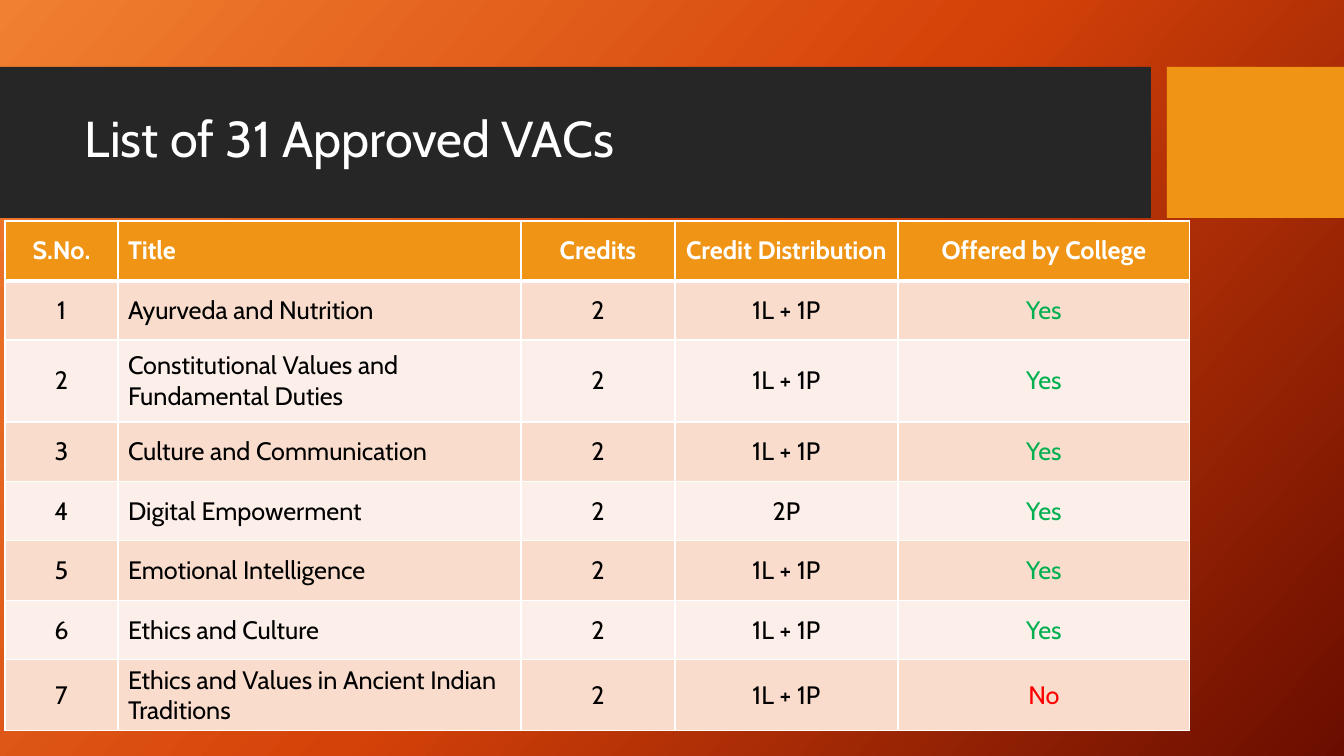
"""Builds the slide listing the approved value added courses."""
import copy
import pptx
import pptx.util
import pptx.dml.color
import pptx.enum.shapes
import pptx.enum.text
import pptx.oxml
import pptx.oxml.ns

RGB = pptx.dml.color.RGBColor
WHITE = RGB(0xFF, 0xFF, 0xFF)
BLACK = RGB(0, 0, 0)
DARK = RGB(0x26, 0x26, 0x26)
AMBER = RGB(0xF0, 0x94, 0x15)
PEACH = RGB(0xF9, 0xDC, 0xCC)
PALE = RGB(0xFC, 0xEE, 0xE8)
GREEN = RGB(0, 0xB0, 0x50)
RED = RGB(0xFF, 0, 0)
GLOW = [(0, RGB(0xF1, 0x80, 0x31)), (0.5, RGB(0xD5, 0x42, 0x09)), (1, RGB(0x6A, 0x0D, 0))]
FONT = "Cabin"
ALIGN = pptx.enum.text.PP_ALIGN
MIDDLE = pptx.enum.text.MSO_ANCHOR.MIDDLE


def px(*sizes):
    return [round(size * 914400 / 100.8) for size in sizes]


def edge(cell, side, points):
    cell._tc.get_or_add_tcPr().append(pptx.oxml.parse_xml(
        f'<a:ln{side} {pptx.oxml.ns.nsdecls("a")} w="{points * 12700}">'
        f'<a:solidFill><a:srgbClr val="{WHITE}"/></a:solidFill></a:ln{side}>'))


deck = pptx.Presentation()
deck.slide_width, deck.slide_height = px(1344, 756)
slide = deck.slides.add_slide(deck.slide_layouts[6])

back = slide.background.fill
back.gradient()
back.gradient_angle = 318
stops = slide._element.find(".//" + pptx.oxml.ns.qn("a:gsLst"))
stops.insert(1, copy.deepcopy(stops[0]))
for stop, (place, color) in zip(back.gradient_stops, GLOW):
    stop.position = place
    stop.color.rgb = color

for left, width, color in [(0, 1151, DARK), (1167, 177, AMBER)]:
    band = slide.shapes.add_shape(
        pptx.enum.shapes.MSO_SHAPE.RECTANGLE, *px(left, 67, width, 151))
    band.shadow.inherit = False
    band.fill.solid()
    band.fill.fore_color.rgb = color
    band.line.fill.background()

title = slide.shapes.add_textbox(*px(75, 82, 1059, 119)).text_frame
title.word_wrap = True
title.vertical_anchor = MIDDLE
head = title.paragraphs[0]
head.text = "List of 31 Approved VACs"
head.line_spacing = 0.9
head.font.name = FONT
head.font.size = pptx.util.Pt(36)
head.font.color.rgb = WHITE

courses = [
    ("Ayurveda and Nutrition", "1L + 1P", "Yes"),
    ("Constitutional Values and Fundamental Duties", "1L + 1P", "Yes"),
    ("Culture and Communication", "1L + 1P", "Yes"),
    ("Digital Empowerment", "2P", "Yes"),
    ("Emotional Intelligence", "1L + 1P", "Yes"),
    ("Ethics and Culture", "1L + 1P", "Yes"),
    ("Ethics and Values in Ancient Indian Traditions", "1L + 1P", "No"),
]
rows = [("S.No.", "Title", "Credits", "Credit Distribution", "Offered by College")]
for num, (name, split, offer) in enumerate(courses, 1):
    rows.append((str(num), name, "2", split, offer))
widths = px(113, 403, 154, 223, 292)
heights = px(60, 59, 82, 60, 59, 60, 59, 71)
table = slide.shapes.add_table(
    len(rows), len(widths), *px(5, 221), sum(widths), sum(heights)).table
for column, width in zip(table.columns, widths):
    column.width = width
for row, height in zip(table.rows, heights):
    row.height = height

inks = {"Yes": GREEN, "No": RED}
for r, texts in enumerate(rows):
    for c, text in enumerate(texts):
        cell = table.cell(r, c)
        for side in "LRTB":
            heavy = (r, side) in [(0, "B"), (1, "T")]
            edge(cell, side, 3 if heavy else 1)
        cell.fill.solid()
        cell.fill.fore_color.rgb = AMBER if r == 0 else PEACH if r % 2 else PALE
        cell.vertical_anchor = MIDDLE
        line = cell.text_frame.paragraphs[0]
        line.text = text
        line.alignment = ALIGN.LEFT if c == 1 else ALIGN.CENTER
        line.font.name = FONT
        line.font.size = pptx.util.Pt(18)
        line.font.bold = r == 0
        line.font.color.rgb = WHITE if r == 0 else inks.get(text, BLACK)

deck.save("out.pptx")
